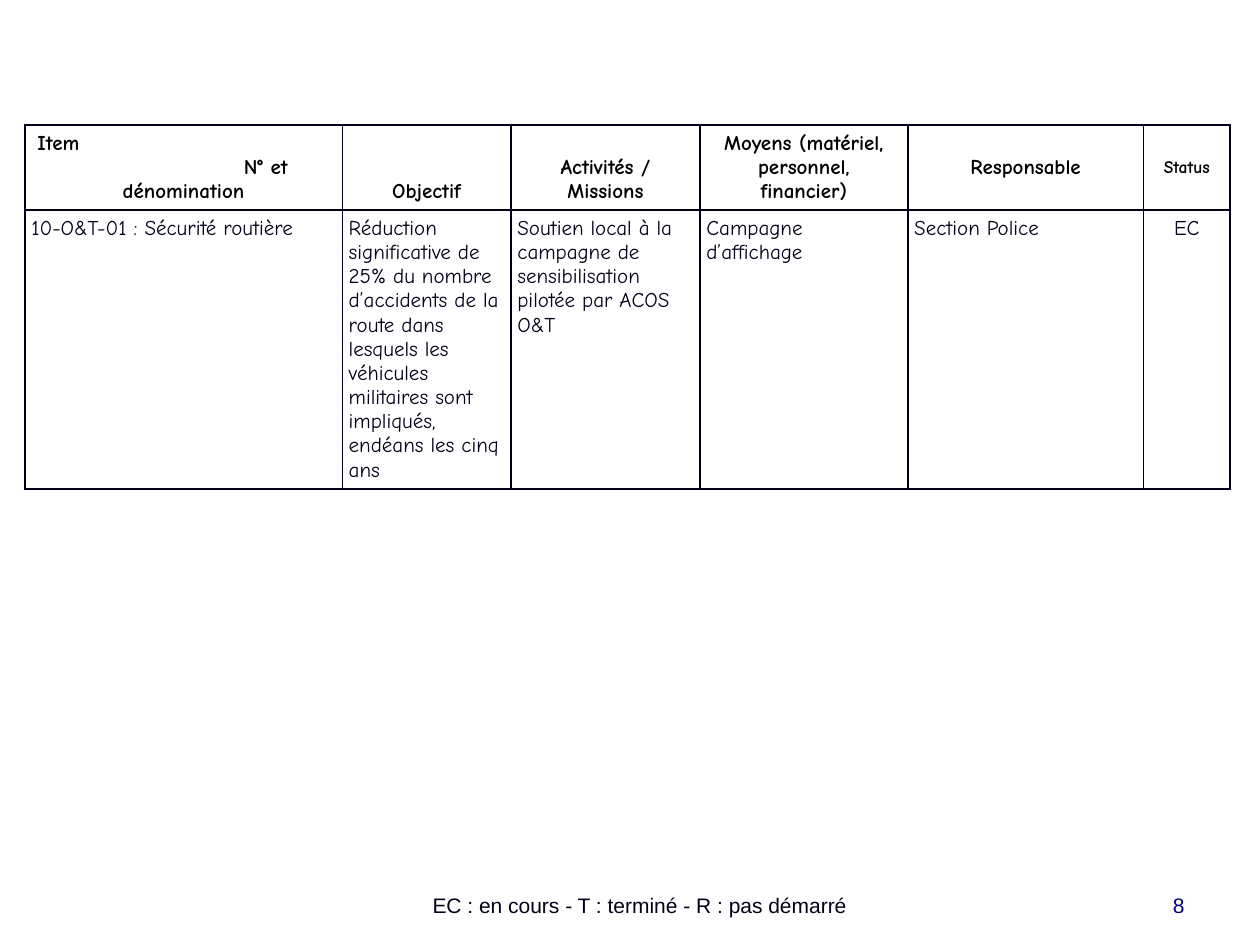
from dataclasses import dataclass

from lxml import etree
from pptx import Presentation
from pptx.dml.color import RGBColor
from pptx.enum import text as t
from pptx.oxml import ns
from pptx.util import Cm, Pt

LEFT, MID, RIGHT = t.PP_ALIGN.LEFT, t.PP_ALIGN.CENTER, t.PP_ALIGN.RIGHT
MIDDLE, BOTTOM, TOP = t.MSO_ANCHOR.MIDDLE, t.MSO_ANCHOR.BOTTOM, t.MSO_ANCHOR.TOP


@dataclass(frozen=True)
class Theme:
    ink: str = "000018"
    head: str = "000000"
    page: str = "000080"
    body: str = "Comic Neue"
    foot: str = "Arial"
    size: float = 12
    small: float = 10
    line: float = 1


THEME = Theme()

WIDTHS = (6.4, 3.4, 3.81, 4.19, 4.75, 1.75)
HEIGHTS = (1.71, 5.61)
# Header: text, anchor, size
HEADS = (
    ("", MIDDLE, THEME.size),
    ("Objectif", BOTTOM, THEME.size),
    ("Activités / Missions", BOTTOM, THEME.size),
    ("Moyens (matériel, personnel, financier)", BOTTOM, THEME.size),
    ("Responsable", MIDDLE, THEME.size),
    ("Status", MIDDLE, THEME.small),
)
# Stepped lines of the first header: text, alignment, indent
STEPS = (("Item", LEFT, 0), ("N° et", LEFT, 4.16), ("dénomination", MID, 0))
ITEM = (
    "10-O&T-01 : Sécurité routière",
    "Réduction significative de 25% du nombre d’accidents de la route dans "
    "lesquels les véhicules militaires sont impliqués, endéans les cinq ans",
    "Soutien local à la campagne de sensibilisation pilotée par ACOS O&T",
    "Campagne d’affichage",
    "Section Police",
    "EC",
)


def add_run(para, words, color, face=THEME.body, size=THEME.size, bold=False):
    run = para.add_run()
    run.text = words
    font = run.font
    font.name, font.size, font.bold = face, Pt(size), bold
    font.color.rgb = RGBColor.from_string(color)


def add_note(slide, words, box, align, color):
    shape = slide.shapes.add_textbox(*map(Cm, box))
    frame = shape.text_frame
    frame.word_wrap = True
    frame.vertical_anchor = BOTTOM
    para = frame.paragraphs[0]
    para.alignment = align
    add_run(para, words, color, THEME.foot)


def set_edges(cell):
    props = cell._tc.get_or_add_tcPr()
    for side in ("lnL", "lnR", "lnT", "lnB"):
        line = etree.SubElement(props, ns.qn("a:" + side), w=str(Pt(THEME.line)))
        fill = etree.SubElement(line, ns.qn("a:solidFill"))
        etree.SubElement(fill, ns.qn("a:srgbClr"), val=THEME.ink)


def add_steps(frame):
    for i, (words, align, indent) in enumerate(STEPS):
        para = frame.add_paragraph() if i else frame.paragraphs[0]
        para.alignment = align
        if indent:
            para._p.get_or_add_pPr().set("marL", str(Cm(indent)))
        add_run(para, words, THEME.head, bold=True)


def fill_head(cell, words, anchor, size):
    cell.vertical_anchor = anchor
    if not words:
        add_steps(cell.text_frame)
        return
    para = cell.text_frame.paragraphs[0]
    para.alignment = MID
    add_run(para, words, THEME.head, size=size, bold=True)


def fill_item(cell, words, align):
    cell.vertical_anchor = TOP
    cell.margin_left = cell.margin_right = Cm(0.13)
    cell.margin_top = cell.margin_bottom = Cm(0.13)
    para = cell.text_frame.paragraphs[0]
    para.alignment = align
    add_run(para, words, THEME.ink)


def add_grid(slide):
    table = slide.shapes.add_table(
        len(HEIGHTS), len(WIDTHS), Cm(0.5), Cm(2.52),
        Cm(sum(WIDTHS)), Cm(sum(HEIGHTS))).table
    table.first_row = table.horz_banding = False
    for row, high in zip(table.rows, HEIGHTS):
        row.height = Cm(high)
    for i, (wide, head, words) in enumerate(zip(WIDTHS, HEADS, ITEM)):
        table.columns[i].width = Cm(wide)
        fill_head(table.cell(0, i), *head)
        fill_item(table.cell(1, i), words, MID if words == "EC" else LEFT)
    for cell in table.iter_cells():
        set_edges(cell)
        cell.fill.background()


def main():
    deck = Presentation()
    deck.slide_width, deck.slide_height = Cm(25.4), Cm(19.05)
    slide = deck.slides.add_slide(deck.slide_layouts[6])

    # Action table
    add_grid(slide)

    # Footer legend and page number
    add_note(slide, "EC : en cours - T : terminé - R : pas démarré",
             (5.9, 17.35, 14, 1.27), MID, THEME.ink)
    add_note(slide, "8", (18.21, 17.35, 5.92, 1.27), RIGHT, THEME.page)

    deck.save("out.pptx")


if __name__ == "__main__":
    main()
